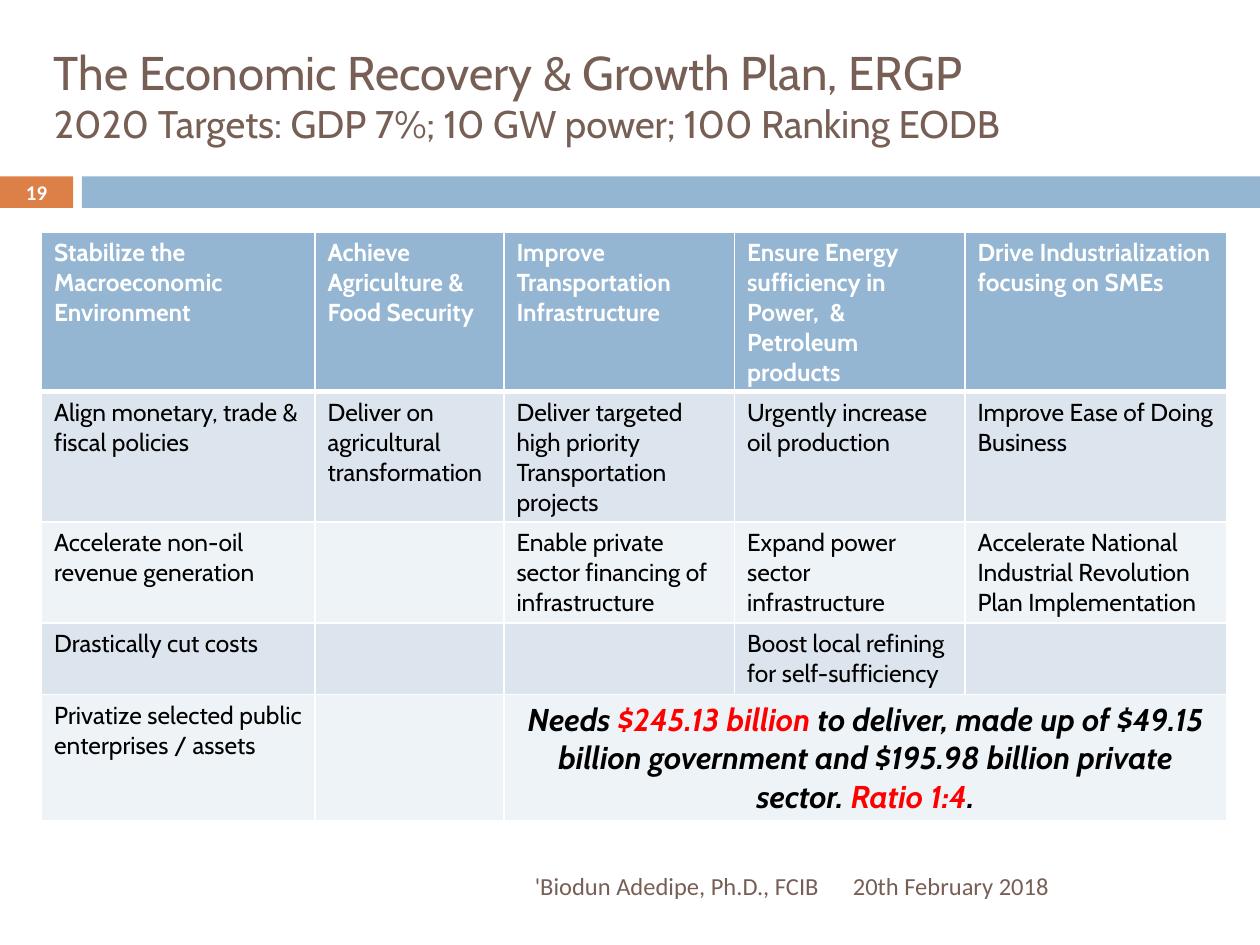
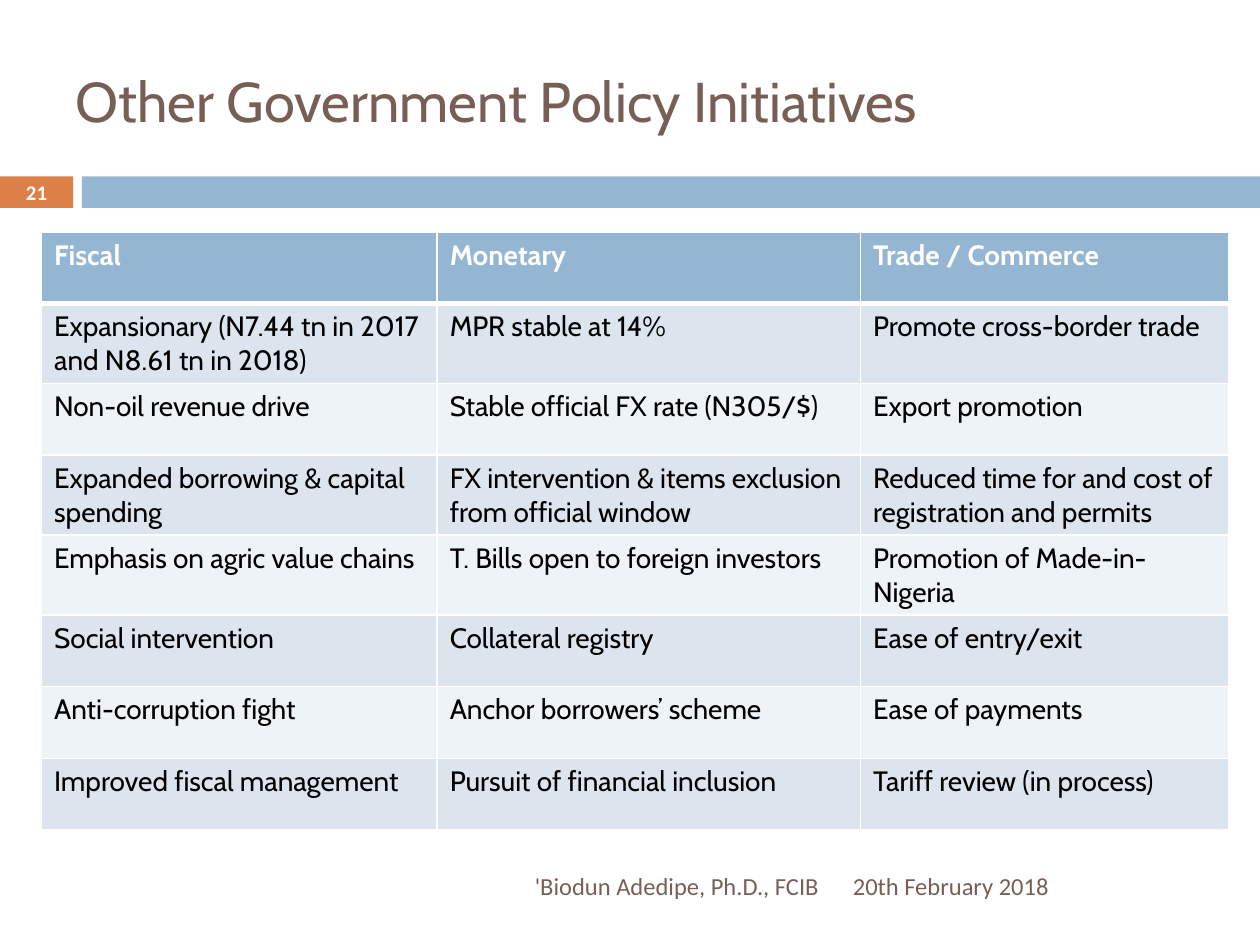
from dataclasses import dataclass

from lxml import etree
from pptx import Presentation
from pptx.dml.color import RGBColor
from pptx.enum.shapes import MSO_SHAPE
from pptx.enum.text import MSO_ANCHOR as Anchor, PP_ALIGN as Align
from pptx.oxml.ns import qn
from pptx.util import Inches, Pt


@dataclass(frozen=True)
class Theme:
    brown: str = "775F55"
    orange: str = "DD8047"
    blue: str = "94B6D2"
    band_dark: str = "DCE5EE"
    band_light: str = "EEF3F7"
    white: str = "FFFFFF"
    black: str = "000000"
    red: str = "FF0000"
    heading_font: str = "Cabin"
    footer_font: str = "Calibri"
    footer_size: float = 14
    number_size: float = 11.9
    callout_size: float = 18
    thin_rule: float = 1
    thick_rule: float = 3
    row_height: float = 0.57


THEME = Theme()
TABLE_LEFT, TABLE_TOP = 0.33, 1.84

PLAN_COLUMNS = [2.17, 1.5, 1.83, 1.83, 2.08]
PLAN_ROWS = [
    ["Stabilize the Macroeconomic Environment", "Achieve Agriculture & Food Security",
     "Improve Transportation Infrastructure",
     "Ensure Energy sufficiency in Power,  & Petroleum products",
     "Drive Industrialization focusing on SMEs"],
    ["Align monetary, trade & fiscal policies", "Deliver on agricultural transformation",
     "Deliver targeted high priority Transportation projects",
     "Urgently increase oil production", "Improve Ease of Doing Business"],
    ["Accelerate non-oil revenue generation", "",
     "Enable private sector financing of infrastructure",
     "Expand power sector infrastructure",
     "Accelerate National Industrial Revolution Plan Implementation"],
    ["Drastically cut costs", "", "", "Boost local refining for self-sufficiency", ""],
    ["Privatize selected public enterprises / assets", "", "", "", ""],
]
FUNDING_NEED = [
    ("Needs ", THEME.black),
    ("$245.13 billion", THEME.red),
    (" to deliver, made up of $49.15 billion government and "
     "$195.98 billion private sector. ", THEME.black),
    ("Ratio 1:4", THEME.red),
    (".", THEME.black),
]

POLICY_COLUMNS = [3.14, 3.36, 2.92]
POLICY_ROWS = [
    ["Fiscal", "Monetary", "Trade / Commerce"],
    ["Expansionary (N7.44 tn in 2017 and N8.61 tn in 2018)", "MPR stable at 14%",
     "Promote cross-border trade"],
    ["Non-oil revenue drive", "Stable official FX rate (N305/$)", "Export promotion"],
    ["Expanded borrowing & capital spending",
     "FX intervention & items exclusion from official window",
     "Reduced time for and cost of registration and permits"],
    ["Emphasis on agric value chains", "T. Bills open to foreign investors",
     "Promotion of Made-in-Nigeria"],
    ["Social intervention", "Collateral registry", "Ease of entry/exit"],
    ["Anti-corruption fight", "Anchor borrowers’ scheme", "Ease of payments"],
    ["Improved fiscal management", "Pursuit of financial inclusion",
     "Tariff review (in process)"],
]


def add_span(para, text, size, color, font=THEME.heading_font, bold=False, italic=False):
    span = para.add_run()
    span.text = text
    span.font.name = font
    span.font.size = Pt(size)
    span.font.bold = bold
    span.font.italic = italic
    span.font.color.rgb = RGBColor.from_string(color)


def add_text_box(page, left, top, width, height, align=Align.LEFT):
    box = page.shapes.add_textbox(Inches(left), Inches(top), Inches(width), Inches(height))
    frame = box.text_frame
    frame.word_wrap = True
    frame.vertical_anchor = Anchor.MIDDLE
    para = frame.paragraphs[0]
    para.alignment = align
    return para


def add_bar(page, left, top, width, height, color):
    bar = page.shapes.add_shape(MSO_SHAPE.RECTANGLE, Inches(left), Inches(top),
                                Inches(width), Inches(height))
    bar.shadow.inherit = False
    bar.fill.solid()
    bar.fill.fore_color.rgb = RGBColor.from_string(color)
    bar.line.fill.background()


def add_number_band(page, number, top=1.4, height=0.25, tab=0.58, gap=0.07, page_width=10):
    add_bar(page, 0, top, tab, height, THEME.orange)
    add_bar(page, tab + gap, top, page_width - tab - gap, height, THEME.blue)
    para = add_text_box(page, 0, top - 0.01, tab, height + 0.02, Align.CENTER)
    add_span(para, number, THEME.number_size, THEME.white, THEME.footer_font, bold=True)


def add_footer(page, top=6.83, height=0.4):
    for text, left, width, align in [
        ("'Biodun Adedipe, Ph.D., FCIB", 0.67, 5.93, Align.RIGHT),
        ("20th February 2018", 6.67, 2.92, Align.LEFT),
    ]:
        para = add_text_box(page, left, top, width, height, align)
        add_span(para, text, THEME.footer_size, THEME.brown, THEME.footer_font)


def add_title(page, box, lines):
    para = add_text_box(page, *box)
    for index, (text, size) in enumerate(lines):
        if index:
            para.add_line_break()
        add_span(para, text, size, THEME.brown)


def set_borders(cell, row_index):
    props = cell._tc.get_or_add_tcPr()
    top = THEME.thick_rule if row_index == 1 else THEME.thin_rule
    bottom = THEME.thick_rule if row_index == 0 else THEME.thin_rule
    for side, width in [("L", THEME.thin_rule), ("R", THEME.thin_rule),
                        ("T", top), ("B", bottom)]:
        line = etree.SubElement(props, qn(f"a:ln{side}"), w=str(Pt(width)))
        fill = etree.SubElement(line, qn("a:solidFill"))
        etree.SubElement(fill, qn("a:srgbClr"), val=THEME.white)


def add_policy_table(page, columns, rows, size):
    frame = page.shapes.add_table(
        len(rows), len(columns), Inches(TABLE_LEFT), Inches(TABLE_TOP),
        Inches(sum(columns)), Inches(THEME.row_height * len(rows)))
    table = frame.table
    for column, width in zip(table.columns, columns):
        column.width = Inches(width)
    for row_index, texts in enumerate(rows):
        table.rows[row_index].height = Inches(THEME.row_height)
        header = row_index == 0
        band = THEME.band_dark if row_index % 2 else THEME.band_light
        for column_index, text in enumerate(texts):
            cell = table.cell(row_index, column_index)
            set_borders(cell, row_index)
            cell.fill.solid()
            cell.fill.fore_color.rgb = RGBColor.from_string(THEME.blue if header else band)
            if text:
                add_span(cell.text_frame.paragraphs[0], text, size,
                         THEME.white if header else THEME.black, bold=header)
    return table


def add_funding_callout(table):
    cell = table.cell(4, 2)
    cell.merge(table.cell(4, 4))
    cell.vertical_anchor = Anchor.MIDDLE
    para = cell.text_frame.paragraphs[0]
    para.alignment = Align.CENTER
    for text, color in FUNDING_NEED:
        add_span(para, text, THEME.callout_size, color, bold=True, italic=True)


def add_page(deck, number, title_box, title_lines):
    page = deck.slides.add_slide(deck.slide_layouts[6])
    add_number_band(page, number)
    add_footer(page)
    add_title(page, title_box, title_lines)
    return page


def build_recovery_plan(deck):
    page = add_page(deck, "19", (0.33, 0.25, 9.25, 1), [
        ("The Economic Recovery & Growth Plan, ERGP", 27),
        ("2020 Targets: GDP 7%; 10 GW power; 100 Ranking EODB", 22),
    ])
    add_funding_callout(add_policy_table(page, PLAN_COLUMNS, PLAN_ROWS, 14))


def build_policy_initiatives(deck):
    page = add_page(deck, "21", (0.5, 0.42, 8.75, 0.75),
                    [("Other Government Policy Initiatives", 32)])
    add_policy_table(page, POLICY_COLUMNS, POLICY_ROWS, 16)


def main():
    deck = Presentation()
    deck.slide_width, deck.slide_height = Inches(10), Inches(7.5)
    build_recovery_plan(deck)
    build_policy_initiatives(deck)
    deck.save("out.pptx")


if __name__ == "__main__":
    main()
